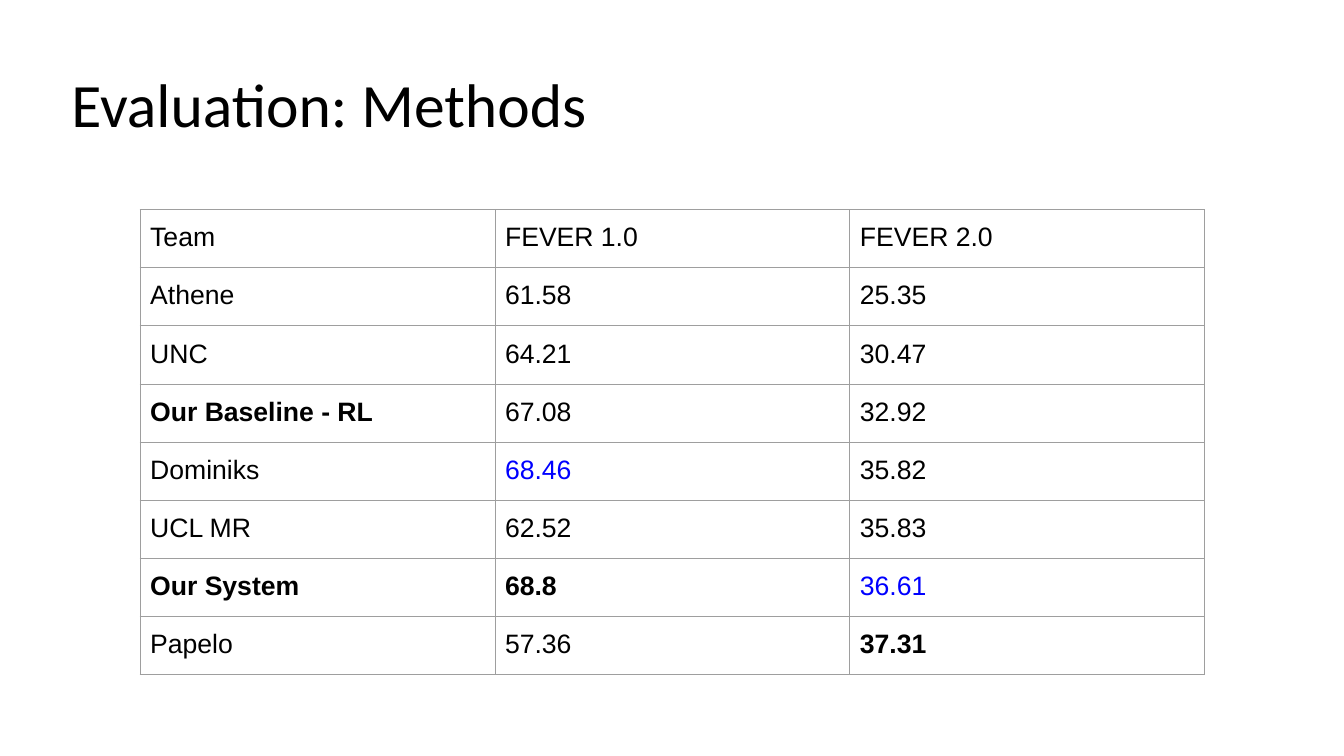
import pptx
import pptx.util
import pptx.dml.color
import pptx.enum.text
import pptx.oxml
import pptx.oxml.ns

Inches = pptx.util.Inches
Pt = pptx.util.Pt
COLORS = {"text": "000000", "second": "0000FF", "border": "9E9E9E"}


def add_run(p, text, font, size, color="text", bold=False):
    r = p.add_run()
    r.text = text
    r.font.name = font
    r.font.size = Pt(size)
    r.font.bold = bold
    r.font.color.rgb = pptx.dml.color.RGBColor.from_string(COLORS[color])


def add_borders(cell):
    tcPr = cell._tc.get_or_add_tcPr()
    for side in ("lnL", "lnR", "lnT", "lnB"):
        tcPr.append(pptx.oxml.parse_xml(
            f'<a:{side} {pptx.oxml.ns.nsdecls("a")} w="{Pt(0.75)}"><a:solidFill>'
            f'<a:srgbClr val="{COLORS["border"]}"/></a:solidFill></a:{side}>'))


prs = pptx.Presentation()
prs.slide_width = Inches(13.33)
prs.slide_height = Inches(7.5)
s = prs.slides.add_slide(prs.slide_layouts[6])

# Title
sp = s.shapes.add_textbox(Inches(0.61), Inches(0.65), Inches(16.57), Inches(0.83))
tf = sp.text_frame
tf.word_wrap = True
tf.vertical_anchor = pptx.enum.text.MSO_ANCHOR.MIDDLE
p = tf.paragraphs[0]
p.line_spacing = 0.9
add_run(p, "Evaluation: Methods", "Calibri", 44)

# Scores per team
rows = [
    ("Team", "FEVER 1.0", "FEVER 2.0"),
    ("Athene", "61.58", "25.35"),
    ("UNC", "64.21", "30.47"),
    ("Our Baseline - RL", "67.08", "32.92"),
    ("Dominiks", "68.46", "35.82"),
    ("UCL MR", "62.52", "35.83"),
    ("Our System", "68.8", "36.61"),
    ("Papelo", "57.36", "37.31"),
]
bold_texts = {"Our Baseline - RL", "Our System", "68.8", "37.31"}
second_best = {"68.46", "36.61"}

col_width, row_height = 3.52, 0.56
table = s.shapes.add_table(
    len(rows), 3, Inches(1.39), Inches(2.08),
    Inches(3 * col_width), Inches(len(rows) * row_height)).table
table.first_row = False
table.horz_banding = False

for i, row in enumerate(rows):
    for j, text in enumerate(row):
        cell = table.cell(i, j)
        cell.margin_left = cell.margin_right = Inches(0.1)
        cell.margin_top = cell.margin_bottom = Inches(0.13)
        add_borders(cell)
        cell.fill.background()
        color = "second" if text in second_best else "text"
        add_run(cell.text_frame.paragraphs[0], text, "Arial", 19, color, text in bold_texts)

prs.save("out.pptx")
